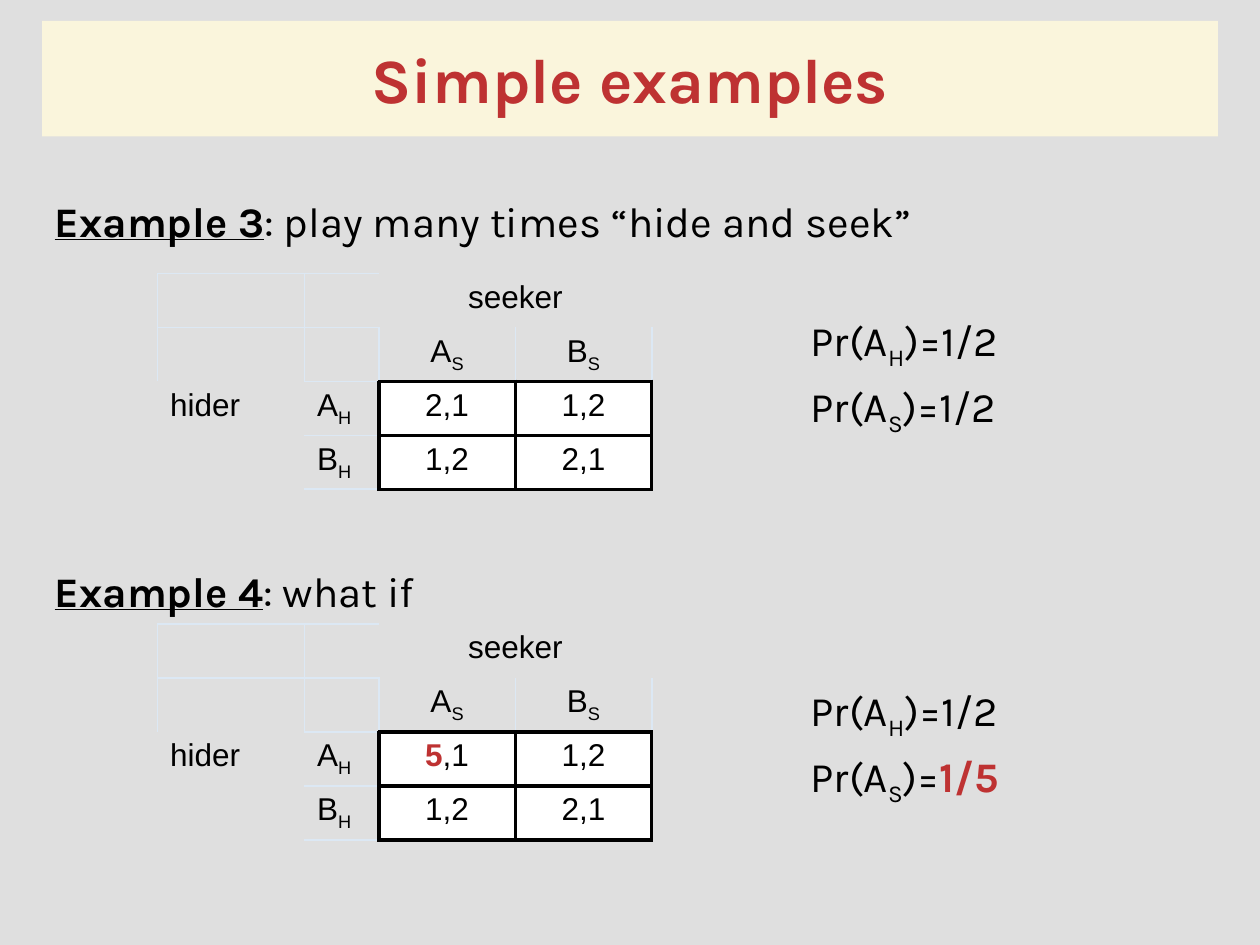
from lxml import etree
from pptx import Presentation
from pptx.dml.color import RGBColor
from pptx.enum.text import MSO_ANCHOR, MSO_AUTO_SIZE, PP_ALIGN
from pptx.oxml.ns import qn
from pptx.util import Pt

GRAY = RGBColor(0xDF, 0xDF, 0xDF)
CREAM = RGBColor(0xFA, 0xF5, 0xDC)
RED = RGBColor(0xBE, 0x32, 0x32)
PALE = RGBColor(0xDC, 0xE8, 0xF4)
BLACK = RGBColor(0, 0, 0)
WHITE = RGBColor(0xFF, 0xFF, 0xFF)


def add_runs(p, runs, font, size):
    """Add (text, style) runs; style is "", "sub", "head" or "red"."""
    for text, style in runs:
        r = p.add_run()
        r.text = text
        r.font.name = font
        r.font.size = Pt(size)
        r.font.bold = style in ("head", "red")
        r.font.underline = style == "head"
        r.font.color.rgb = RED if style == "red" else BLACK
        if style == "sub":
            r._r.get_or_add_rPr().set("baseline", "-25000")


def set_borders(cell, pale, dark):
    """Draw the sides named in pale and dark, and hide the others."""
    tc_pr = cell._tc.get_or_add_tcPr()
    for side in "LRTB":
        ln = etree.SubElement(tc_pr, qn(f"a:ln{side}"))
        if side not in pale + dark:
            etree.SubElement(ln, qn("a:noFill"))
            continue
        color, width = (BLACK, 2.25) if side in dark else (PALE, 1)
        ln.set("w", str(Pt(width)))
        fill = etree.SubElement(ln, qn("a:solidFill"))
        etree.SubElement(fill, qn("a:srgbClr")).set("val", str(color))


prs = Presentation()
prs.slide_width, prs.slide_height = Pt(720), Pt(540)
s = prs.slides.add_slide(prs.slide_layouts[1])
s.background.fill.solid()
s.background.fill.fore_color.rgb = GRAY

# Title
title = s.shapes.title
title.left, title.top, title.width, title.height = Pt(24), Pt(12), Pt(672), Pt(66)
title.fill.solid()
title.fill.fore_color.rgb = CREAM
tf = title.text_frame
tf.auto_size = MSO_AUTO_SIZE.NONE
tf.vertical_anchor = MSO_ANCHOR.MIDDLE
p = tf.paragraphs[0]
p.alignment = PP_ALIGN.CENTER
add_runs(p, [("Simple examples", "red")], "Karla", 36)

# Body: (left indent, space before or None for the template's, runs)
pr_hider = [("Pr(A", ""), ("H", "sub"), (")=1/2", "")]
pr_seeker = [("Pr(A", ""), ("S", "sub"), (")=", "")]
lines = [
    (0, None, [("Example 3", "head"), (": play many times “hide and seek”", "")]),
    (432, 39.3, pr_hider),
    (432, None, pr_seeker + [("1/2", "")]),
    (0, 73, [("Example 4", "head"), (": what if", "")]),
    (432, 39.3, pr_hider),
    (432, None, pr_seeker + [("1/5", "red")]),
]
body = s.placeholders[1]
body.left, body.top, body.width, body.height = Pt(24), Pt(108), Pt(672), Pt(396)
tf = body.text_frame
tf.auto_size = MSO_AUTO_SIZE.NONE
for i, (indent, before, runs) in enumerate(lines):
    p = tf.paragraphs[0] if i == 0 else tf.add_paragraph()
    if before:
        p.space_before = Pt(before)
    p_pr = p._p.get_or_add_pPr()
    p_pr.set("marL", str(Pt(indent)))
    p_pr.set("indent", "0")
    etree.SubElement(p_pr, qn("a:buNone"))
    add_runs(p, runs, "Karla", 24)

# Payoff tables
COL_WIDTHS = [84, 42.5, 78, 78]
ROW_HEIGHT = 30.86
PALE_SIDES = [
    ["LRTB", "LTB", "", ""],
    ["LRT", "LRTB", "LR", "LR"],
    ["", "TB", "", ""],
    ["", "TB", "", ""],
]
DARK_SIDES = [
    ["", "", "", ""],
    ["", "", "B", "B"],
    ["", "R", "LRTB", "LRTB"],
    ["", "R", "LRTB", "LRTB"],
]
for top, first_payoff in [(156.2, [("2,1", "")]),
                          (356.6, [("5", "red"), (",1", "")])]:
    texts = [
        [[], [], [("seeker", "")], []],
        [[], [], [("A", ""), ("S", "sub")], [("B", ""), ("S", "sub")]],
        [[("hider", "")], [("A", ""), ("H", "sub")], first_payoff, [("1,2", "")]],
        [[], [("B", ""), ("H", "sub")], [("1,2", "")], [("2,1", "")]],
    ]
    table = s.shapes.add_table(4, 4, Pt(90), Pt(top), Pt(sum(COL_WIDTHS)),
                               Pt(4 * ROW_HEIGHT)).table
    table.first_row = table.horz_banding = False
    for col, width in zip(table.columns, COL_WIDTHS):
        col.width = Pt(width)
    for i, row in enumerate(texts):
        table.rows[i].height = Pt(ROW_HEIGHT)
        for j, runs in enumerate(row):
            cell = table.cell(i, j)
            set_borders(cell, PALE_SIDES[i][j], DARK_SIDES[i][j])
            if i >= 2 and j >= 2:
                cell.fill.solid()
                cell.fill.fore_color.rgb = WHITE
            else:
                cell.fill.background()
            p = cell.text_frame.paragraphs[0]
            if j >= 2:
                p.alignment = PP_ALIGN.CENTER
            add_runs(p, runs, "Arial", 18)
    table.cell(0, 2).merge(table.cell(0, 3))

prs.save("out.pptx")
